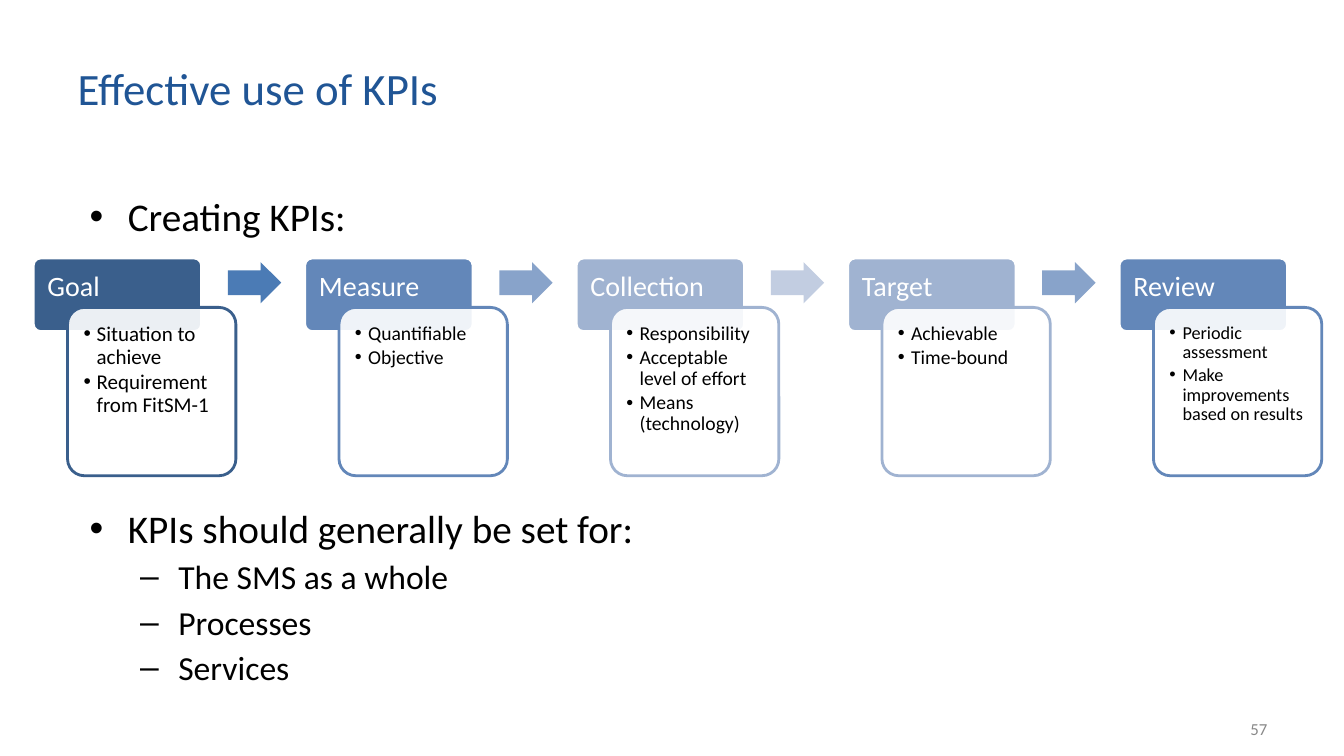
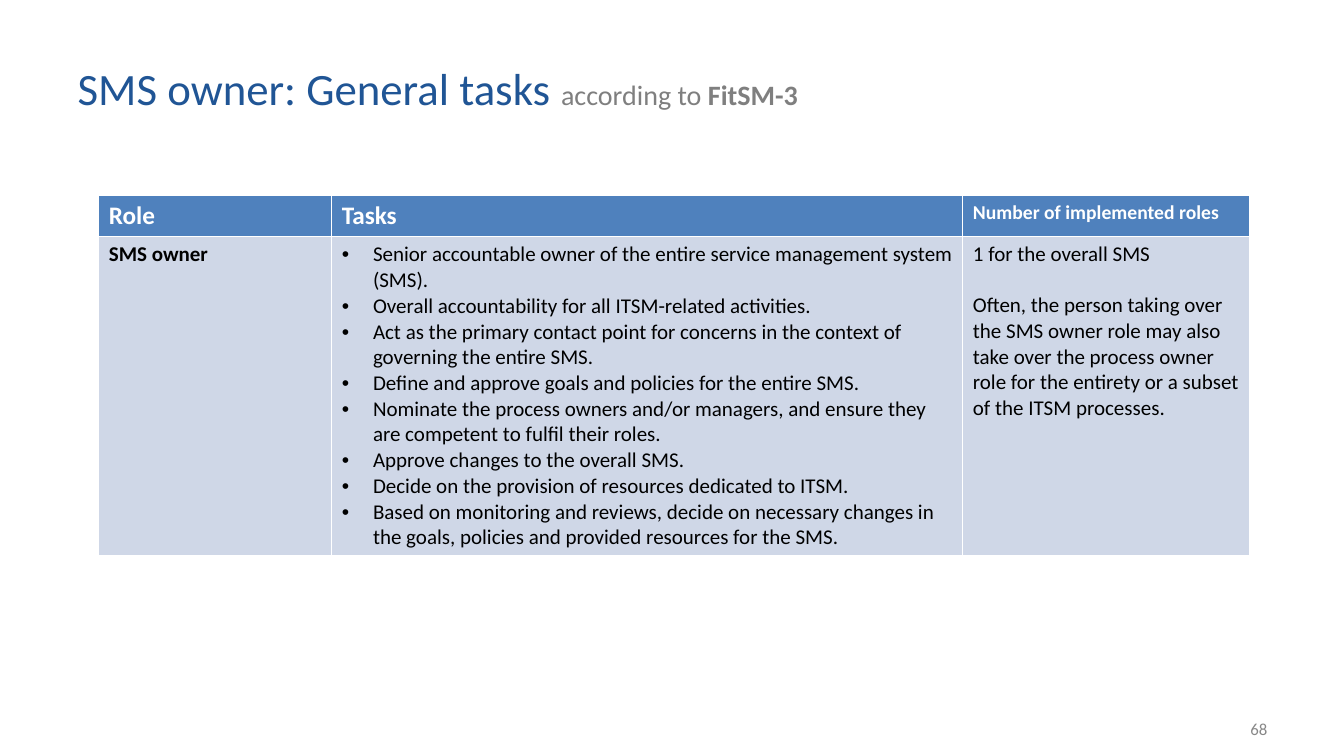
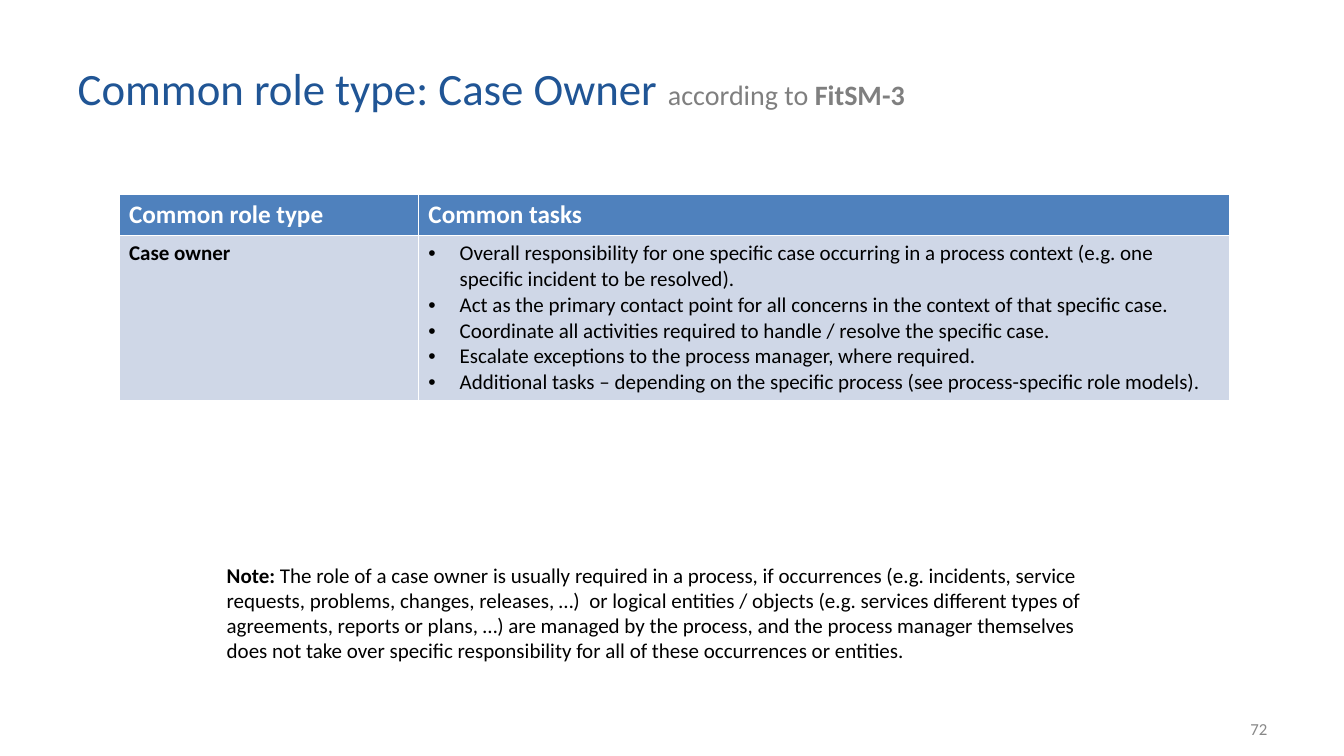
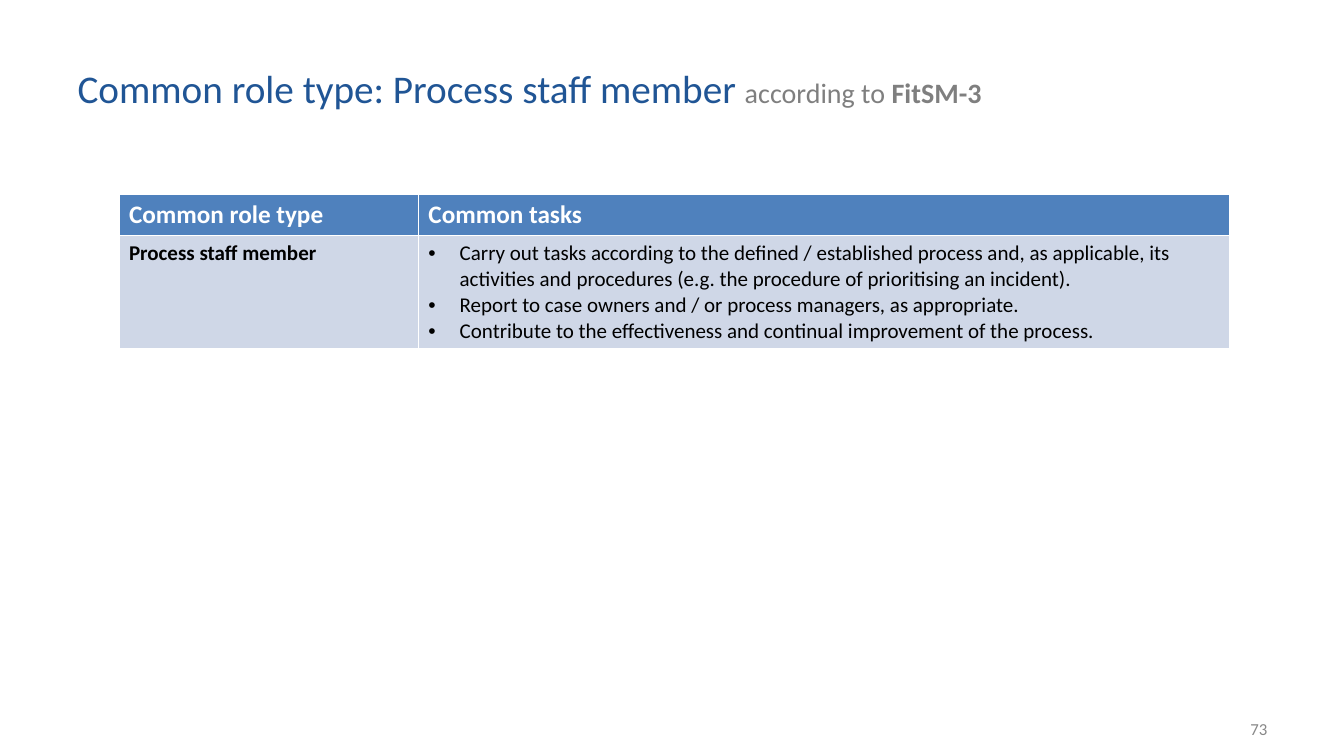
from lxml.etree import SubElement
from pptx import Presentation
from pptx.dml.color import RGBColor
from pptx.enum.shapes import MSO_SHAPE as Preset
from pptx.enum.text import MSO_ANCHOR as Anchor, MSO_AUTO_SIZE as AutoSize, PP_ALIGN as Align
from pptx.oxml.ns import qn
from pptx.util import Inches, Pt

COLORS = {
    "title": "205595", "subtitle": "7F7F7F", "number": "888888",
    "text": "000000", "white": "FFFFFF",
    "header": "4F81BD", "cell": "CFD7E7",
    "dark": "3A5F8C", "medium": "6387B9", "light": "A0B3D1",
    "arrow_dark": "4B7BB5", "arrow_medium": "88A3CA", "arrow_light": "C2CDE1",
}
FONT = "Calibri"
TITLE_AREA = (0.67, 0.3, 9.9, 1.14)
NUMBER_AREA = (9.56, 7.03, 3.11, 0.39)
BODY_AREA = (0.67, 1.86, 11.99, 5.17)
NOTE_AREA = (2.15, 5.53, 9.02, 1.1)

# Text formats
TITLE = {"size": Pt(32), "color": "title"}
LONG_TITLE = {"size": Pt(28), "color": "title"}
SUBTITLE = {"size": Pt(20), "color": "subtitle"}
NUMBER = {"size": Pt(12), "color": "number"}
BODY = {"size": Pt(28)}
SUB_BODY = {"size": Pt(24)}
STEP = {"size": Pt(20), "color": "white"}
HEADER = {"size": Pt(18), "color": "white", "bold": True}
SMALL_HEADER = {**HEADER, "size": Pt(14)}
CELL = {"size": Pt(15)}
BOLD_CELL = {**CELL, "bold": True}

# Bullets: character, left margin, hanging indent
BODY_BULLET = ("•", 0.5, -0.38)
SUB_BULLET = ("–", 1, -0.38)
STEP_BULLET = ("•", 0.13, -0.13)
CELL_BULLET = ("•", 0.31, -0.31)

# Process steps: name, colour, text size, points, colour of the next arrow
STEPS = [
    ("Goal", "dark", 15, ["Situation to achieve", "Requirement from FitSM-1"], "arrow_dark"),
    ("Measure", "medium", 14, ["Quantifiable", "Objective"], "arrow_medium"),
    ("Collection", "light", 14,
     ["Responsibility", "Acceptable level of effort", "Means (technology)"], "arrow_light"),
    ("Target", "light", 14, ["Achievable", "Time-bound"], "arrow_medium"),
    ("Review", "medium", 13,
     ["Periodic assessment", "Make improvements based on results"], None),
]
FIRST_STEP, LAST_STEP = 0.33, 11.1

SMS_OWNER_TASKS = [
    "Senior accountable owner of the entire service management system (SMS).",
    "Overall accountability for all ITSM-related activities.",
    "Act as the primary contact point for concerns in the context of governing the entire SMS.",
    "Define and approve goals and policies for the entire SMS.",
    "Nominate the process owners and/or managers, and ensure they are competent to fulfil "
    "their roles.",
    "Approve changes to the overall SMS.",
    "Decide on the provision of resources dedicated to ITSM.",
    "Based on monitoring and reviews, decide on necessary changes in the goals, policies and "
    "provided resources for the SMS.",
]
CASE_OWNER_TASKS = [
    "Overall responsibility for one specific case occurring in a process context (e.g. one "
    "specific incident to be resolved).",
    "Act as the primary contact point for all concerns in the context of that specific case.",
    "Coordinate all activities required to handle / resolve the specific case.",
    "Escalate exceptions to the process manager, where required.",
    "Additional tasks – depending on the specific process (see process-specific role models).",
]
STAFF_TASKS = [
    "Carry out tasks according to the defined / established process and, as applicable, its "
    "activities and procedures (e.g. the procedure of prioritising an incident).",
    "Report to case owners and / or process managers, as appropriate.",
    "Contribute to the effectiveness and continual improvement of the process.",
]
CASE_OWNER_NOTE = (
    " The role of a case owner is usually required in a process, if occurrences (e.g. incidents, "
    "service requests, problems, changes, releases, …)  or logical entities / objects (e.g. "
    "services different types of agreements, reports or plans, …) are managed by the process, "
    "and the process manager themselves does not take over specific responsibility for all of "
    "these occurrences or entities."
)


def rgb(name):
    return RGBColor.from_string(COLORS[name])


def inches(values):
    return [Inches(value) for value in values]


# Text
def line(text, style, bullet=None, **spacing):
    """One paragraph with a single run."""
    return [(text, style)], bullet, spacing


def set_bullet(paragraph, bullet):
    character, margin, indent = bullet
    properties = paragraph._p.get_or_add_pPr()
    properties.set("marL", str(Inches(margin)))
    properties.set("indent", str(Inches(indent)))
    color = SubElement(properties, qn("a:buClr"))
    SubElement(color, qn("a:srgbClr"), val=COLORS["text"])
    SubElement(properties, qn("a:buFont"), typeface="Arial")
    SubElement(properties, qn("a:buChar"), char=character)


def write(frame, lines, margins=(0.1, 0.05, 0.1, 0.05), anchor=Anchor.TOP):
    left, top, right, bottom = inches(margins)
    settings = {"word_wrap": True, "auto_size": AutoSize.NONE, "vertical_anchor": anchor,
                "margin_left": left, "margin_top": top,
                "margin_right": right, "margin_bottom": bottom}
    for name, value in settings.items():
        setattr(frame, name, value)
    fill_paragraphs(frame, lines)


def fill_paragraphs(frame, lines):
    for index, (runs, bullet, spacing) in enumerate(lines):
        paragraph = frame.add_paragraph() if index else frame.paragraphs[0]
        if bullet:
            set_bullet(paragraph, bullet)
        for name, value in {"alignment": Align.LEFT, **spacing}.items():
            setattr(paragraph, name, value)
        for text, style in runs:
            run = paragraph.add_run()
            run.text = text
            values = {"name": FONT, "bold": False, "color": "text", **style}
            run.font.color.rgb = rgb(values.pop("color"))
            for name, value in values.items():
                setattr(run.font, name, value)


def add_text(slide, area, lines, anchor=Anchor.TOP):
    write(slide.shapes.add_textbox(*inches(area)).text_frame, lines, anchor=anchor)


# Slide frame: title and page number
def add_slide(presentation, title, number, according=True, style=TITLE):
    slide = presentation.slides.add_slide(presentation.slide_layouts[5])
    shape = slide.shapes.title
    shape.left, shape.top, shape.width, shape.height = inches(TITLE_AREA)
    runs = [(title, style)]
    if according:
        runs += [("according to ", SUBTITLE), ("FitSM-3", {**SUBTITLE, "bold": True})]
    write(shape.text_frame, [(runs, None, {})], anchor=Anchor.MIDDLE)
    add_text(slide, NUMBER_AREA, [line(number, NUMBER, alignment=Align.RIGHT)], Anchor.MIDDLE)
    return slide


# Process chain
def add_preset(slide, preset, area, fill, adjustments, outline=None):
    shape = slide.shapes.add_shape(preset, *inches(area))
    shape.shadow.inherit = False
    for index, value in enumerate(adjustments):
        shape.adjustments[index] = value
    shape.fill.solid()
    shape.fill.fore_color.rgb = rgb(fill)
    if outline:
        shape.line.color.rgb = rgb(outline)
        shape.line.width = Pt(2)
    else:
        shape.line.fill.background()
    return shape


def add_step(slide, left, name, color, size, points, arrow):
    label = add_preset(slide, Preset.ROUNDED_RECTANGLE, (left, 2.56, 1.67, 0.73),
                       color, [0.1], "white")
    write(label.text_frame, [line(name, STEP, line_spacing=0.9)], (0.12, 0.12, 0.12, 0.3))
    card = add_preset(slide, Preset.ROUNDED_RECTANGLE, (left + 0.34, 3.05, 1.67, 1.67),
                      "white", [0.1], color)
    fill_color = card._element.spPr.find(qn("a:solidFill"))[0]
    SubElement(fill_color, qn("a:alpha"), val="90000")
    write(card.text_frame,
          [line(point, {"size": Pt(size)}, STEP_BULLET, line_spacing=0.9, space_after=Pt(2.1))
           for point in points], (0.11,) * 4)
    if arrow:
        add_preset(slide, Preset.RIGHT_ARROW, (left + 1.93, 2.6, 0.53, 0.41), arrow, [0.6, 0.5])


# Role tables
def set_borders(cell):
    properties = cell._tc.get_or_add_tcPr()
    for side in ("lnL", "lnR", "lnT", "lnB"):
        border = SubElement(properties, qn(f"a:{side}"), w=str(Pt(0.96)))
        fill = SubElement(border, qn("a:solidFill"))
        SubElement(fill, qn("a:srgbClr"), val=COLORS["white"])


def add_role_table(slide, left, top, widths, body_height, headers, cells):
    heights = [0.41, body_height]
    area = (left, top, sum(widths), sum(heights))
    table = slide.shapes.add_table(2, len(widths), *inches(area)).table
    table.horz_banding = False
    for column, width in zip(table.columns, widths):
        column.width = Inches(width)
    rows = [([[header] for header in headers], "header"), (cells, "cell")]
    for row, height, (contents, fill) in zip(table.rows, heights, rows):
        row.height = Inches(height)
        for cell, lines in zip(row.cells, contents):
            set_borders(cell)
            cell.fill.solid()
            cell.fill.fore_color.rgb = rgb(fill)
            fill_paragraphs(cell.text_frame, lines)


def role_cells(role, tasks):
    return [[line(role, BOLD_CELL)], [line(task, CELL, CELL_BULLET) for task in tasks]]


def add_common_role(slide, role, tasks, body_height):
    headers = [line("Common role type", HEADER), line("Common tasks", HEADER)]
    add_role_table(slide, 1.18, 1.93, [2.97, 8.05], body_height, headers,
                   role_cells(role, tasks))


# Slides
def add_kpi_slide(presentation):
    slide = add_slide(presentation, "Effective use of KPIs", "57", according=False)
    targets = ["The SMS as a whole", "Processes", "Services"]
    add_text(slide, BODY_AREA, [
        line("Creating KPIs:", BODY, BODY_BULLET),
        line("KPIs should generally be set for:", BODY, BODY_BULLET, space_before=Pt(189)),
        *[line(target, SUB_BODY, SUB_BULLET, space_before=Pt(3.6)) for target in targets],
    ])
    pitch = (LAST_STEP - FIRST_STEP) / (len(STEPS) - 1)
    for index, step in enumerate(STEPS):
        add_step(slide, FIRST_STEP + index * pitch, *step)


def add_sms_owner_slide(presentation):
    slide = add_slide(presentation, "SMS owner: General tasks ", "68")
    headers = [line("Role", HEADER), line("Tasks", HEADER),
               line("Number of implemented roles", SMALL_HEADER)]
    count = [
        line("1 for the overall SMS", CELL),
        line("Often, the person taking over the SMS owner role may also take over the process "
             "owner role for the entirety or a subset of the ITSM processes.",
             CELL, space_before=Pt(18)),
    ]
    add_role_table(slide, 0.98, 1.94, [2.31, 6.26, 2.84], 3.15, headers,
                   role_cells("SMS owner", SMS_OWNER_TASKS) + [count])


def add_case_owner_slide(presentation):
    slide = add_slide(presentation, "Common role type: Case Owner ", "72")
    add_common_role(slide, "Case owner", CASE_OWNER_TASKS, 1.62)
    add_text(slide, NOTE_AREA, [([("Note:", BOLD_CELL), (CASE_OWNER_NOTE, CELL)], None, {})])


def add_staff_slide(presentation):
    slide = add_slide(presentation, "Common role type: Process staff member ", "73",
                      style=LONG_TITLE)
    add_common_role(slide, "Process staff member", STAFF_TASKS, 1.11)


def main():
    presentation = Presentation()
    presentation.slide_width, presentation.slide_height = inches((13.33, 7.5))
    add_kpi_slide(presentation)
    add_sms_owner_slide(presentation)
    add_case_owner_slide(presentation)
    add_staff_slide(presentation)
    presentation.save("out.pptx")


if __name__ == "__main__":
    main()
